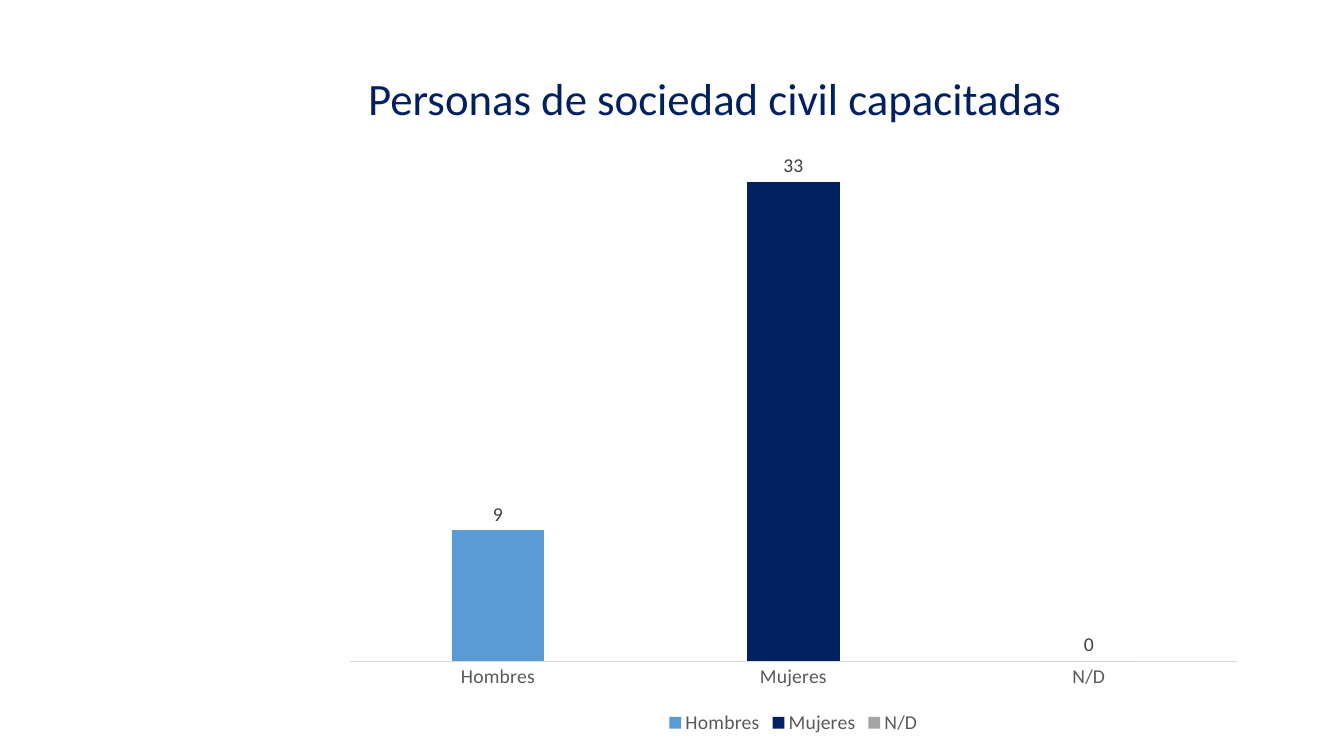
import pptx
import pptx.chart.data
import pptx.dml.color
import pptx.enum.chart
import pptx.enum.text
import pptx.oxml
import pptx.oxml.ns
import pptx.util

Cm = pptx.util.Cm
Pt = pptx.util.Pt
RGBColor = pptx.dml.color.RGBColor

NAVY = RGBColor(0x00, 0x20, 0x60)
BLUE = RGBColor(0x5B, 0x9B, 0xD5)
GRAY = RGBColor(0xA5, 0xA5, 0xA5)
LABEL_GRAY = RGBColor(0x40, 0x40, 0x40)
TEXT_GRAY = RGBColor(0x59, 0x59, 0x59)
LINE_GRAY = RGBColor(0xD9, 0xD9, 0xD9)
FONT = "Calibri"

PEOPLE = [("Hombres", 9, BLUE), ("Mujeres", 33, NAVY), ("N/D", 0, GRAY)]


def style_font(font, size, color):
    font.name = FONT
    font.size = Pt(size)
    font.color.rgb = color


def place_plot_area(chart, **fractions):
    """Fix the inner plot area as fractions (x, y, w, h) of the chart."""
    plot_area = chart._chartSpace.chart.plotArea
    for old_layout in plot_area.findall(pptx.oxml.ns.qn("c:layout")):
        plot_area.remove(old_layout)
    sizes = "".join(f'<c:{key} val="{value}"/>' for key, value in fractions.items())
    plot_area.insert(0, pptx.oxml.parse_xml(
        f'<c:layout {pptx.oxml.ns.nsdecls("c")}><c:manualLayout>'
        '<c:layoutTarget val="inner"/><c:xMode val="edge"/><c:yMode val="edge"/>'
        f'{sizes}</c:manualLayout></c:layout>'))


def add_title(page, left, top, width, height):
    title = page.shapes.title
    title.left, title.top, title.width, title.height = left, top, width, height
    frame = title.text_frame
    frame.word_wrap = True
    frame.vertical_anchor = pptx.enum.text.MSO_ANCHOR.MIDDLE
    para = frame.paragraphs[0]
    para.alignment = pptx.enum.text.PP_ALIGN.CENTER
    para.line_spacing = 0.9
    span = para.add_run()
    span.text = "Personas de sociedad civil capacitadas "
    style_font(span.font, 32, NAVY)


def add_people_chart(page, left, top, width, height):
    data = pptx.chart.data.CategoryChartData()
    data.categories = [name for name, count, color in PEOPLE]
    data.add_series("Series 1", [count for name, count, color in PEOPLE])
    chart = page.shapes.add_chart(
        pptx.enum.chart.XL_CHART_TYPE.COLUMN_CLUSTERED,
        left, top, width, height, data).chart
    chart.has_title = False
    style_font(chart.font, 14, TEXT_GRAY)
    place_plot_area(chart, x=0.02, y=0.02, w=0.96, h=0.85)

    # Columns, one colour per category
    plot = chart.plots[0]
    plot.gap_width = 219
    plot.overlap = -27
    plot.vary_by_categories = True
    for index, (name, count, color) in enumerate(PEOPLE):
        fill = plot.series[0].points[index].format.fill
        fill.solid()
        fill.fore_color.rgb = color

    # Value labels
    plot.has_data_labels = True
    labels = plot.data_labels
    labels.show_value = True
    labels.position = pptx.enum.chart.XL_LABEL_POSITION.OUTSIDE_END
    style_font(labels.font, 14, LABEL_GRAY)

    # Axes
    category_axis = chart.category_axis
    category_axis.major_tick_mark = pptx.enum.chart.XL_TICK_MARK.NONE
    category_axis.format.line.color.rgb = LINE_GRAY
    category_axis.format.line.width = Pt(0.75)
    style_font(category_axis.tick_labels.font, 14, TEXT_GRAY)
    value_axis = chart.value_axis
    value_axis.minimum_scale = 0
    value_axis.maximum_scale = 35
    value_axis.has_major_gridlines = False
    value_axis.visible = False

    # Legend
    chart.has_legend = True
    chart.legend.position = pptx.enum.chart.XL_LEGEND_POSITION.BOTTOM
    chart.legend.include_in_layout = False
    style_font(chart.legend.font, 14, TEXT_GRAY)


def main():
    deck = pptx.Presentation()
    deck.slide_width, deck.slide_height = Cm(33.87), Cm(19.05)
    page = deck.slides.add_slide(deck.slide_layouts.get_by_name("Title Only"))
    add_title(page, Cm(8.36), Cm(0.99), Cm(19.58), Cm(3.12))
    add_people_chart(page, Cm(8.36), Cm(3.56), Cm(23.27), Cm(15.06))
    deck.save("out.pptx")


if __name__ == "__main__":
    main()
